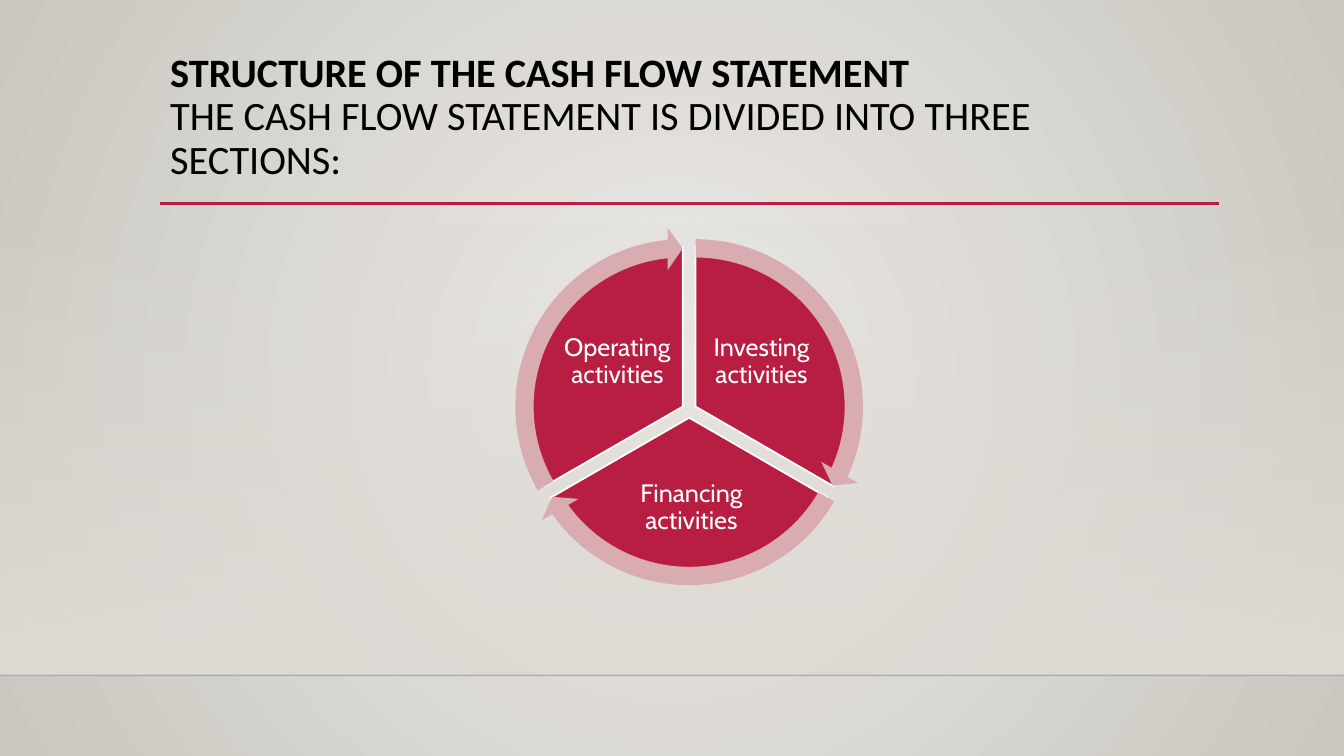
import math

import lxml.etree
import pptx
import pptx.dml.color
import pptx.enum.shapes
import pptx.enum.text
import pptx.oxml
import pptx.oxml.ns
import pptx.util

Pt = pptx.util.Pt
SHAPES = pptx.enum.shapes.MSO_SHAPE
qn = pptx.oxml.ns.qn

CYCLE_CENTRE = (492.3, 293.1)
SECTOR_OFFSET = 5.3
PIE_SIZE = 228.2
ARROW_SIZE = 256.3
DEGREE = 0.6  # one degree in shape adjustment units
ARROW_HEAD = 3.275

# label, start angle, end angle, label centre, label size
SECTORS = [
    ("Investing activities", 270, 30, (544, 258.5), (81.4, 67.7)),
    ("Financing activities", 30, 150, (493.9, 362.5), (122.4, 59.8)),
    ("Operating activities", 150, 270, (441, 258.5), (81.4, 67.7)),
]


def rgb(color):
    return pptx.dml.color.RGBColor.from_string(color)


def set_alpha(color_element, percent):
    alpha = lxml.etree.SubElement(color_element, qn("a:alpha"))
    alpha.set("val", str(percent * 1000))


def write_text(paragraph, text, font="Cabin", size=18, color="FFFFFF", bold=False):
    run = paragraph.add_run()
    run.text = text
    run.font.name = font
    run.font.size = Pt(size)
    run.font.color.rgb = rgb(color)
    run.font.bold = bold


class CycleSlide:
    accent = "B71E42"
    arrow = "D8ACB0"
    white = "FFFFFF"

    def __init__(self, presentation):
        self.slide = presentation.slides.add_slide(presentation.slide_layouts[6])

    def gradient(self, fill, colors):
        fill.gradient()
        for stop, color in zip(fill.gradient_stops, colors):
            stop.color.rgb = rgb(color)

    def background(self, inner, outer):
        """Fill the background with a circular gradient from the middle."""
        self.gradient(self.slide.background.fill, (inner, outer))
        linear = next(self.slide.element.iter(qn("a:lin")))
        circle = pptx.oxml.parse_xml(
            '<a:path xmlns:a="http://schemas.openxmlformats.org/drawingml/2006/main" '
            'path="circle"><a:fillToRect l="50000" t="50000" r="50000" b="50000"/></a:path>'
        )
        linear.getparent().replace(linear, circle)

    def shape(self, kind, left, top, width, height):
        shape = self.slide.shapes.add_shape(kind, Pt(left), Pt(top), Pt(width), Pt(height))
        shape.shadow.inherit = False
        shape.line.fill.background()
        return shape

    def fading_band(self, left, top, width, height, color):
        """Add a band that fades from clear at the top to solid below."""
        band = self.shape(SHAPES.RECTANGLE, left, top, width, height)
        self.gradient(band.fill, (color, color))
        band.fill.gradient_angle = 270
        set_alpha(next(band.element.iter(qn("a:srgbClr"))), 0)

    def rule(self, left, right, y, color, weight, alpha=100):
        """Add a horizontal line."""
        line = self.slide.shapes.add_connector(
            pptx.enum.shapes.MSO_CONNECTOR.STRAIGHT, Pt(left), Pt(y), Pt(right), Pt(y))
        line.line.color.rgb = rgb(color)
        line.line.width = Pt(weight)
        if alpha < 100:
            set_alpha(next(line.element.iter(qn("a:srgbClr"))), alpha)
        lxml.etree.SubElement(line.element.spPr, qn("a:effectLst"))

    def text_box(self, left, top, width, height, margins=(7.2, 3.6)):
        """Add a wrapping text box and return its text frame."""
        box = self.slide.shapes.add_textbox(Pt(left), Pt(top), Pt(width), Pt(height))
        frame = box.text_frame
        frame.word_wrap = True
        frame.margin_left = frame.margin_right = Pt(margins[0])
        frame.margin_top = frame.margin_bottom = Pt(margins[1])
        frame.paragraphs[0].line_spacing = 0.9
        return frame

    def title(self, heading, sentence):
        paragraph = self.text_box(114.5, 33.8, 756, 112.3).paragraphs[0]
        style = dict(font="Calibri", size=28.8, color="000000")
        write_text(paragraph, heading, bold=True, **style)
        paragraph.add_line_break()
        write_text(paragraph, sentence, **style)

    def round_shape(self, kind, start, end, size, color, adjustments):
        """Add a part of the cycle, moved outwards along its middle angle."""
        middle = math.radians(start + (end - start) % 360 / 2)
        left = CYCLE_CENTRE[0] + SECTOR_OFFSET * math.cos(middle) - size / 2
        top = CYCLE_CENTRE[1] + SECTOR_OFFSET * math.sin(middle) - size / 2
        shape = self.shape(kind, left, top, size, size)
        shape.fill.solid()
        shape.fill.fore_color.rgb = rgb(color)
        for index, value in enumerate(adjustments):
            shape.adjustments[index] = value
        return shape

    def sector(self, start, end):
        pie = self.round_shape(SHAPES.PIE, start, end, PIE_SIZE, self.accent,
                               (start * DEGREE, end * DEGREE))
        pie.line.color.rgb = rgb(self.white)
        pie.line.width = Pt(1.25)

    def sector_arrow(self, start, end):
        self.round_shape(
            SHAPES.CIRCULAR_ARROW, start, end, ARROW_SIZE, self.arrow,
            (0.051, ARROW_HEAD, end * DEGREE - ARROW_HEAD, start * DEGREE, 0.059))

    def label(self, text, centre, size):
        frame = self.text_box(centre[0] - size[0] / 2, centre[1] - size[1] / 2,
                              *size, margins=(2.2, 2.2))
        frame.vertical_anchor = pptx.enum.text.MSO_ANCHOR.MIDDLE
        frame.paragraphs[0].alignment = pptx.enum.text.PP_ALIGN.CENTER
        write_text(frame.paragraphs[0], text, color=self.white)


def main():
    presentation = pptx.Presentation()
    presentation.slide_width = Pt(960)
    presentation.slide_height = Pt(540)

    page = CycleSlide(presentation)
    page.background("ECEAE7", "CAC7C1")
    page.fading_band(0, 159, 960, 323.3, "DFDBD5")
    page.rule(0, 960, 482.4, "000001", 1, alpha=20)
    page.rule(114.5, 871, 145.4, page.accent, 2.5)
    page.title("STRUCTURE OF THE CASH FLOW STATEMENT",
               "THE CASH FLOW STATEMENT IS DIVIDED INTO THREE SECTIONS:")

    for text, start, end, centre, size in SECTORS:
        page.sector(start, end)
        page.label(text, centre, size)
    for _, start, end, _, _ in SECTORS:
        page.sector_arrow(start, end)

    presentation.save("out.pptx")


if __name__ == "__main__":
    main()
